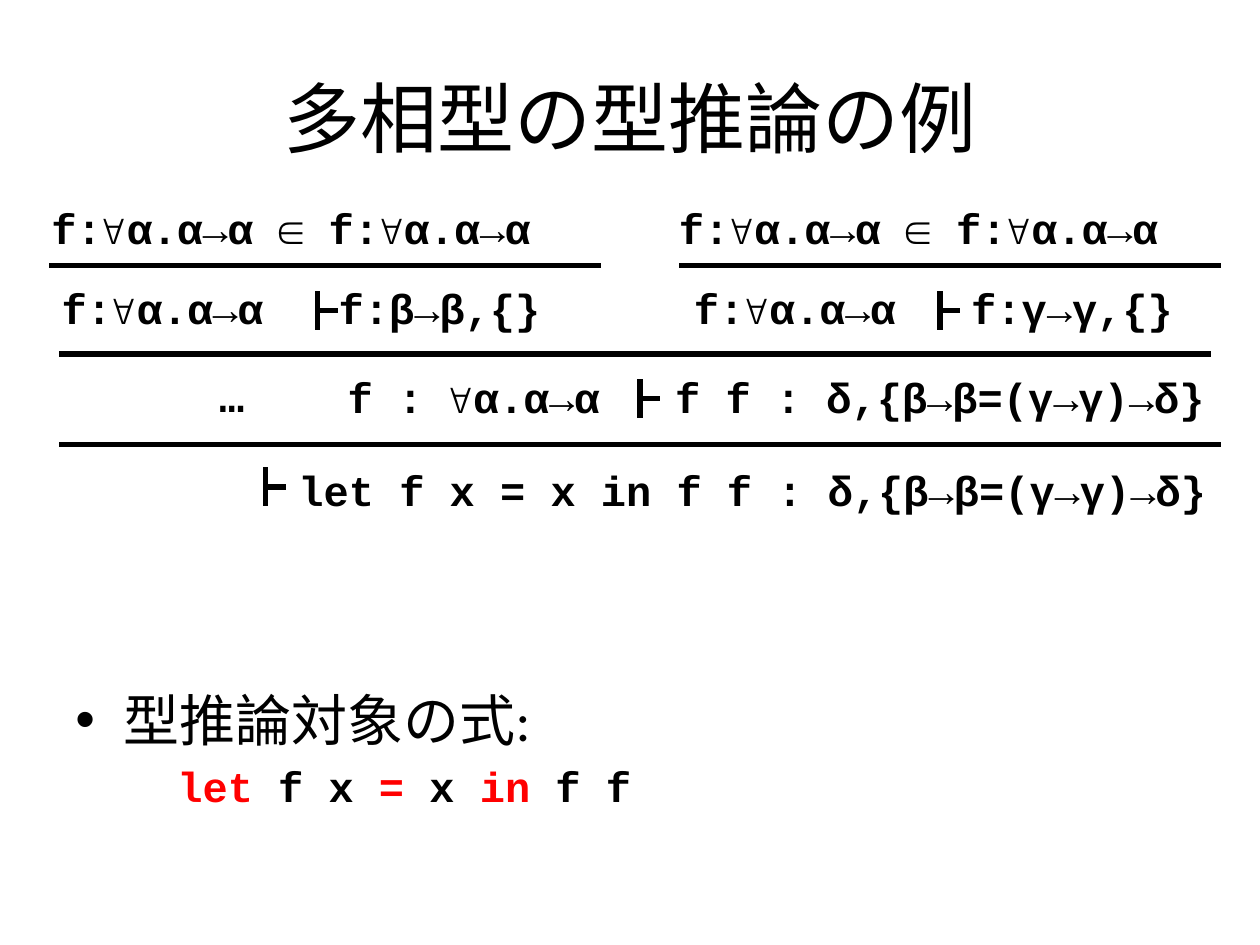
from lxml import etree
from pptx import Presentation
from pptx.dml.color import RGBColor
from pptx.enum.shapes import MSO_CONNECTOR
from pptx.enum.text import MSO_ANCHOR, PP_ALIGN
from pptx.oxml.ns import qn
from pptx.util import Inches, Pt

STRAIGHT = MSO_CONNECTOR.STRAIGHT
MIDDLE, TOP = MSO_ANCHOR.MIDDLE, MSO_ANCHOR.TOP
CENTER, LEFT = PP_ALIGN.CENTER, PP_ALIGN.LEFT
BLACK = RGBColor(0, 0, 0)
RED = RGBColor(255, 0, 0)
PROSE, CODE = "Calibri", "Courier New"
SLIDE_COLUMNS, SLIDE_ROWS = 100, 75
CELL = Inches(0.1)
TURNSTILE_WIDTH, TURNSTILE_HEIGHT = 1.6, 3.1


def cells(count):
    """Return the length of a number of grid columns or rows."""
    return round(count * CELL)


def add_frame(slide, left, top, width, height, anchor=TOP, wrap=True):
    """Add a text box on the grid and return its text frame."""
    box = slide.shapes.add_textbox(*map(cells, (left, top, width, height)))
    frame = box.text_frame
    frame.word_wrap = wrap
    frame.vertical_anchor = anchor
    return frame


def add_words(paragraph, words, font, size, color=BLACK, bold=False):
    """Append one formatted run to a paragraph."""
    run = paragraph.add_run()
    run.text = words
    run.font.name, run.font.size, run.font.bold = font, Pt(size), bold
    run.font.color.rgb = color


def add_title(slide, words):
    """Add the centred slide title."""
    title = add_frame(slide, 5, 3, 90, 12.5, MIDDLE).paragraphs[0]
    title.alignment = CENTER
    add_words(title, words, PROSE, 44)


def add_judgment(slide, left, top, width, words, tab=None):
    """Add one formula, with an optional tab stop after the turnstile."""
    formula = add_frame(slide, left, top, width, 5, wrap=False).paragraphs[0]
    formula.alignment = LEFT
    add_words(formula, words, CODE, 24, bold=True)
    if tab:
        stops = etree.SubElement(formula._p.get_or_add_pPr(), qn("a:tabLst"))
        etree.SubElement(stops, qn("a:tab"), pos=str(cells(tab)), algn="l")


def add_rule(shapes, x1, y1, x2, y2):
    """Draw a black stroke between two grid points."""
    rule = shapes.add_connector(STRAIGHT, *map(cells, (x1, y1, x2, y2)))
    rule.line.color.rgb = BLACK
    rule.line.width = Pt(3)
    etree.SubElement(rule._element.spPr, qn("a:effectLst"))


def add_turnstile(slide, left, top):
    """Draw the turnstile sign as a group of two strokes."""
    strokes = slide.shapes.add_group_shape().shapes
    middle = top + TURNSTILE_HEIGHT / 2
    add_rule(strokes, left, top, left, top + TURNSTILE_HEIGHT)
    add_rule(strokes, left, middle, left + TURNSTILE_WIDTH, middle)


def add_subject(slide, heading, code):
    """Add the bulleted heading with its coloured expression below."""
    frame = add_frame(slide, 5, 53.9, 93.4, 19.2)
    bullet, expression = frame.paragraphs[0], frame.add_paragraph()
    bullet.space_before, expression.space_before = Pt(6.4), Pt(4.8)
    properties = bullet._p.get_or_add_pPr()
    properties.set("marL", str(cells(3.8)))
    properties.set("indent", str(-cells(3.8)))
    etree.SubElement(properties, qn("a:buFont"), typeface="Arial")
    etree.SubElement(properties, qn("a:buChar"), char="•")
    add_words(bullet, heading, PROSE, 32)
    expression._p.get_or_add_pPr().set("marL", str(cells(8.1)))
    for words, color in code:
        add_words(expression, words, CODE, 24, color, True)


def main():
    """Build the slide with the type derivation and save it."""
    deck = Presentation()
    deck.slide_width, deck.slide_height = cells(SLIDE_COLUMNS), cells(SLIDE_ROWS)
    slide = deck.slides.add_slide(deck.slide_layouts[6])
    add_title(slide, "多相型の型推論の例")

    for left in (3.1, 52.9):
        add_judgment(slide, left, 15.6, 44.8, "f:∀α.α→α ∈ f:∀α.α→α")
    for left, variable in ((3.9, "β"), (54.1, "γ")):
        words = f"f:∀α.α→α\tf:{variable}→{variable},{{}}"
        add_judgment(slide, left, 21.9, 41.7, words, 22)
    conclusion = "f f : δ,{β→β=(γ→γ)→δ}"
    add_judgment(slide, 16.4, 28.9, 3.9, "…")
    add_judgment(slide, 26.6, 29, 72.5, f"f : ∀α.α→α\t{conclusion}", 26)
    add_judgment(slide, 22.7, 36.4, 75.8, f"let f x = x in {conclusion}")

    for left, top in ((25.2, 23.1), (74.6, 23.1), (50.8, 30.1), (21.1, 37.1)):
        add_turnstile(slide, left, top)
    for start, end, row in ((3.9, 47.7, 21.1), (53.9, 96.9, 21.1),
                            (4.7, 96.1, 28.1), (4.7, 96.9, 35.3)):
        add_rule(slide.shapes, start, row, end, row)

    add_subject(slide, "型推論対象の式:", (
        ("let", RED), (" f x ", BLACK), ("=", RED),
        (" x ", BLACK), ("in", RED), (" f f", BLACK)))
    deck.save("out.pptx")


if __name__ == "__main__":
    main()
